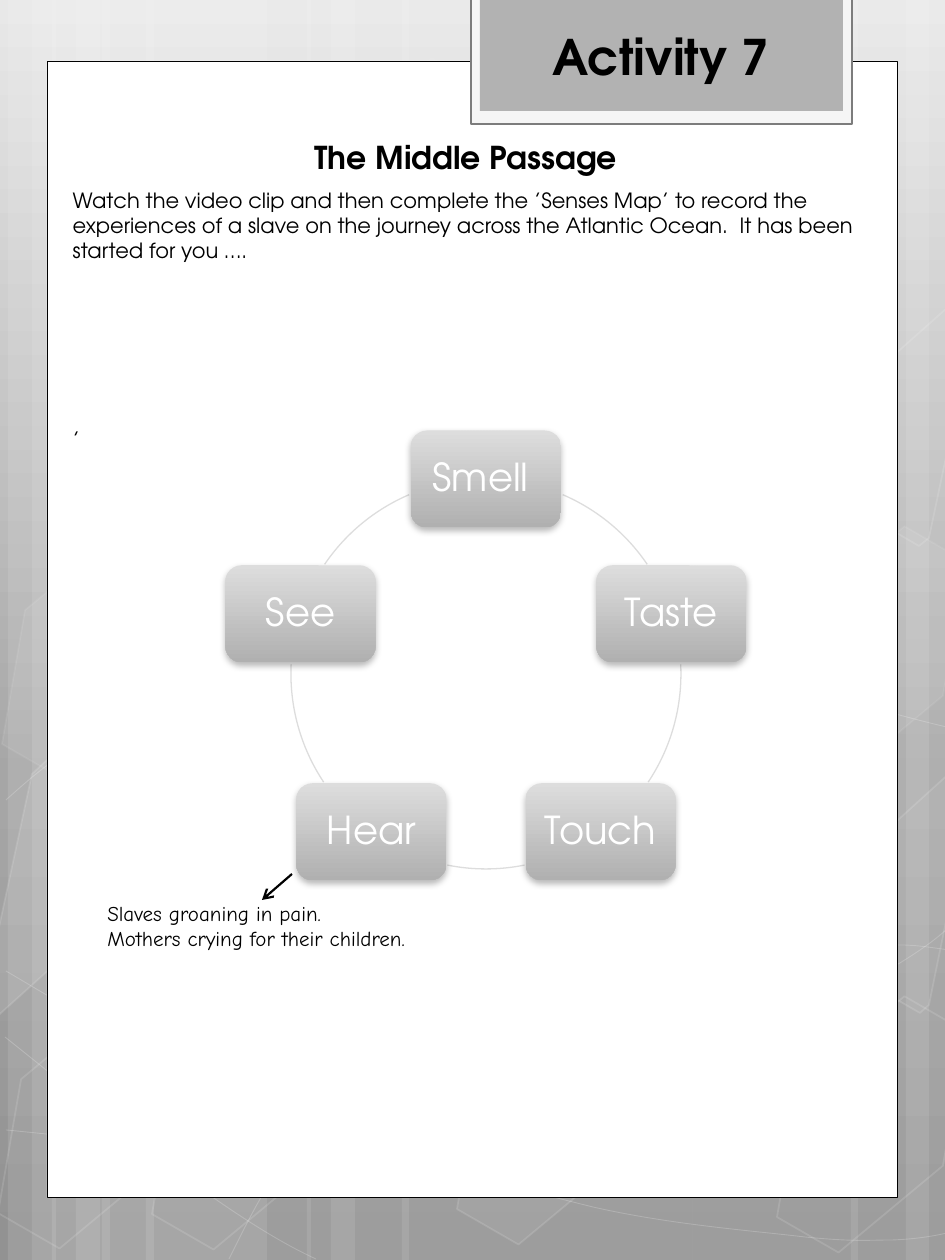
from math import cos, radians, sin, tan

from lxml import etree
from pptx import Presentation
from pptx import util as u
from pptx.dml.color import RGBColor
from pptx.enum import shapes, text
from pptx.oxml import ns

HEX = {"white": "FFFFFF", "black": "000000", "top": "E8E8E8", "mid": "A6A6A6",
       "low": "929292", "frame": "F5F5F5", "edge": "7C7C7C", "tab": "B2B2B2",
       "pale": "DDDDDD", "deep": "B0B0B0"}
FONT, HAND = "TeX Gyre Adventor", "Comic Neue"
WIDE, HIGH = 945, 1260

TITLE = "The Middle Passage"
TASK = ["Watch the video clip and then complete the ’Senses Map’ to record the "
        "experiences of a slave on the journey across the Atlantic Ocean.  "
        "It has been started for you ….", ","]
LABEL = ["Activity 7"]
NOTE = ["Slaves groaning in pain.", "Mothers crying for their children."]
SENSES = ["Smell ", "Taste", "Touch", "Hear", "See"]
ARCS = [(23.2, 55.8), (87.2, 123.7), (168.6, 191.4), (236.3, 272.8), (304.2, 336.8)]
HUB, RADIUS, BOX = (486, 674), 195, (150, 97)

BANDS = [(102, 165), (8, 48), (32, 78), (146, 165), (52, 48), (76, 78),
         (693, 165), (906, 48), (851, 78), (402, 291), (307, 48), (331, 78)]
HEXAGONS = [(316, 59, 4, 8), (469, 989, 6, 12), (10, 993, 0, 12), (14, 524, 7, 8),
            (88, 759, 0, 12), (164, 994, 0, 12), (91, 287, 0, 12),
            (712, 761, 10, 12), (789, 997, 0, 12), (789, 527, 7, 8)]
SHARDS = [
    (10, [(32, 774), (47, 760), (118, 801), (91, 932), (-9, 1022), (-20, 1016)]),
    (4, [(876, 840), (974, 751), (980, 755), (929, 1005), (920, 1013), (847, 971)]),
    (0, [(874, 373), (974, 284), (982, 287), (929, 538), (919, 546), (847, 504)]),
]
CURVES = [
    [(6, 1130), (58, 1135), (108, 1142), (180, 1139), (251, 1137), (338, 1134),
     (432, 1118), (528, 1102), (662, 1068), (748, 1037), (834, 1004), (924, 954),
     (951, 925)],
    [(6, 800), (34, 775), (62, 750), (115, 725), (169, 699), (244, 663), (329, 650),
     (412, 638), (514, 638), (617, 650), (722, 663), (895, 716), (951, 728)],
    [(5, 1037), (120, 1129), (233, 1221), (316, 1259)],
    [(6, 971), (37, 989), (66, 1008), (121, 1034), (176, 1061), (258, 1101),
     (336, 1130), (416, 1159), (515, 1188), (593, 1207), (672, 1225), (756, 1231),
     (805, 1237), (856, 1242), (868, 1240), (893, 1240), (917, 1239), (935, 1236),
     (951, 1232)],
    [(229, 1259), (246, 1225), (262, 1192), (285, 1160), (309, 1130), (340, 1096),
     (367, 1074), (393, 1052), (410, 1041), (444, 1023), (479, 1007), (542, 983),
     (575, 971), (609, 960), (614, 960), (643, 955), (672, 951), (718, 946),
     (751, 945), (777, 942), (838, 945), (838, 945), (900, 945), (900, 945),
     (900, 945), (917, 945), (934, 948), (942, 949), (950, 950), (948, 950),
     (950, 951)],
]


def px(n):
    return round(n * 914400 / 126)


def rgb(name):
    return RGBColor.from_string(HEX[name])


def put(item, **values):
    for key, value in values.items():
        setattr(item, key, value)


def sub(node, tag, **attrs):
    return etree.SubElement(node, ns.qn(tag), {k: str(v) for k, v in attrs.items()})


def fade(shape, way, alpha):
    if alpha < 100:
        node = shape._element.spPr.find(way + "a:solidFill/a:srgbClr", ns._nsmap)
        sub(node, "a:alpha", val=alpha * 1000)


def paint(shape, fill=None, line=None, width=1, fog=100, haze=100):
    shape.shadow.inherit = False
    if fill and fog:
        shape.fill.solid()
        shape.fill.fore_color.rgb = rgb(fill)
        fade(shape, "", fog)
    else:
        shape.fill.background()
    if line:
        put(shape.line, width=u.Pt(width))
        shape.line.color.rgb = rgb(line)
        fade(shape, "a:ln/", haze)
    else:
        shape.line.fill.background()
    return shape


def blend(fill, root, stops):
    fill.gradient()
    fill.gradient_angle = 270
    node = root.find(".//" + ns.qn("a:gsLst"))
    for old in list(node):
        node.remove(old)
    for pos, name in stops:
        sub(sub(node, "a:gs", pos=pos * 1000), "a:srgbClr", val=HEX[name])


def form(kind, x, y, w, h):
    return slide.shapes.add_shape(kind, px(x), px(y), px(w), px(h))


def trace(points, close=False):
    spots = [(px(x), px(y)) for x, y in points]
    pen = slide.shapes.build_freeform(*spots[0], scale=1.0)
    pen.add_line_segments(spots[1:], close=close)
    return pen.convert_to_shape()


def bend(knots, frame=None):
    shape = trace(frame or knots)
    left, top = (min(axis) for axis in zip(*(frame or knots)))
    track = shape._element.find(".//" + ns.qn("a:path"))
    for old in list(track):
        track.remove(old)
    parts = [("a:moveTo", knots[:1])]
    for i in range(1, len(knots), 3):
        three = knots[i:i + 3]
        flat = len(set(three)) == 1
        parts.append(("a:lnTo", three[:1]) if flat else ("a:cubicBezTo", three))
    for tag, points in parts:
        node = sub(track, tag)
        for x, y in points:
            sub(node, "a:pt", x=px(x - left), y=px(y - top))
    return shape


def orbit(deg):
    a = radians(deg)
    return HUB[0] + RADIUS * sin(a), HUB[1] - RADIUS * cos(a)


def arc(start, end):
    pull = 4 / 3 * tan(radians(end - start) / 4) * RADIUS
    knots = []
    for deg, way in ((start, 1), (end, -1)):
        (x, y), a = orbit(deg), radians(deg)
        pair = [(x, y), (x + way * pull * cos(a), y + way * pull * sin(a))]
        knots += pair[::way]
    return knots


def write(frame, lines, size, color="black", face=FONT, bold=False, **look):
    frame.word_wrap = True
    for i, line in enumerate(lines):
        para = frame.paragraphs[0] if i == 0 else frame.add_paragraph()
        put(para, **look)
        run = para.add_run()
        run.text = line
        put(run.font, size=u.Pt(size), name=face, bold=bold)
        run.font.color.rgb = rgb(color)


def place(item, x, y, w, h):
    put(item, left=px(x), top=px(y), width=px(w), height=px(h))


deck = Presentation()
put(deck, slide_width=px(WIDE), slide_height=px(HIGH))
slide = deck.slides.add_slide(deck.slide_layouts[1])
blend(slide.background.fill, slide._element, [(0, "top"), (62, "mid"), (100, "low")])
KIND = shapes.MSO_SHAPE
MID = text.PP_ALIGN.CENTER

for x, w in BANDS:
    paint(form(KIND.RECTANGLE, x, 0, w, HIGH), "white", fog=10)
for knots in CURVES:
    paint(bend(knots), line="white", width=0.5, haze=20)
for x, y, fog, haze in HEXAGONS:
    cell = paint(form(KIND.HEXAGON, x, y, 165, 255), "white", "white", 1, fog, haze)
    cell.rotation = 30
    cell.adjustments[0] = 0.285
for fog, points in SHARDS:
    paint(trace(points, True), "white", "white", 1, fog, 12)

paint(form(KIND.RECTANGLE, 47, 61, 851, 1137), "white", "black", 0.5)
paint(form(KIND.RECTANGLE, 471, -4, 381, 128), "frame", "edge", 1.25)
paint(form(KIND.RECTANGLE, 480, -4, 363, 115), "tab")

title, body = slide.shapes.title, slide.placeholders[1]
for holder in (title, body):
    slide.shapes._spTree.append(holder._element)
place(title, 34, -28, 864, 210)
title.text_frame.vertical_anchor = text.MSO_ANCHOR.BOTTOM
write(title.text_frame, [TITLE], 18, bold=True, alignment=MID)
place(body, 52, 181, 851, 1056)
write(body.text_frame, TASK, 12)
for para in body.text_frame.paragraphs:
    props = para._p.get_or_add_pPr()
    props.set("marL", str(px(8)))
    props.set("indent", "0")
    sub(props, "a:buNone")
body.text_frame.paragraphs[1].space_before = u.Pt(86)

label = slide.shapes.add_textbox(px(496), px(20), px(330), px(72))
write(label.text_frame, LABEL, 28, bold=True, alignment=MID)

ring = [(HUB[0] + a * RADIUS, HUB[1] + b * RADIUS)
        for a, b in ((-1, -1), (1, -1), (1, 1), (-1, 1))]
for ends in ARCS:
    paint(bend(arc(*ends), ring), line="pale", width=0.75)
for i, sense in enumerate(SENSES):
    x, y = orbit(i * 360 / len(SENSES))
    box = paint(form(KIND.ROUNDED_RECTANGLE, x - BOX[0] / 2, y - BOX[1] / 2, *BOX))
    blend(box.fill, box._element, [(0, "pale"), (100, "deep")])
    glow = box._element.spPr.find(ns.qn("a:effectLst"))
    cast = sub(glow, "a:outerShdw", blurRad=u.Pt(4), dist=u.Pt(2), dir=5400000,
               rotWithShape=0)
    sub(sub(cast, "a:srgbClr", val=HEX["black"]), "a:alpha", val=28000)
    frame = box.text_frame
    put(frame, vertical_anchor=text.MSO_ANCHOR.MIDDLE, margin_left=px(11),
        margin_right=px(11), margin_top=px(11), margin_bottom=px(11))
    write(frame, [sense], 22, "white", alignment=MID, line_spacing=0.9)

note = slide.shapes.add_textbox(px(95), px(894), px(326), px(89))
write(note.text_frame, NOTE, 12, face=HAND)
arrow = slide.shapes.add_connector(shapes.MSO_CONNECTOR.STRAIGHT,
                                   px(292), px(874), px(262), px(900))
arrow.line.color.rgb = rgb("black")
arrow.line.width = u.Pt(1.25)
sub(arrow.line._get_or_add_ln(), "a:tailEnd", type="arrow")
sub(arrow._element.spPr, "a:effectLst")

deck.save("out.pptx")
